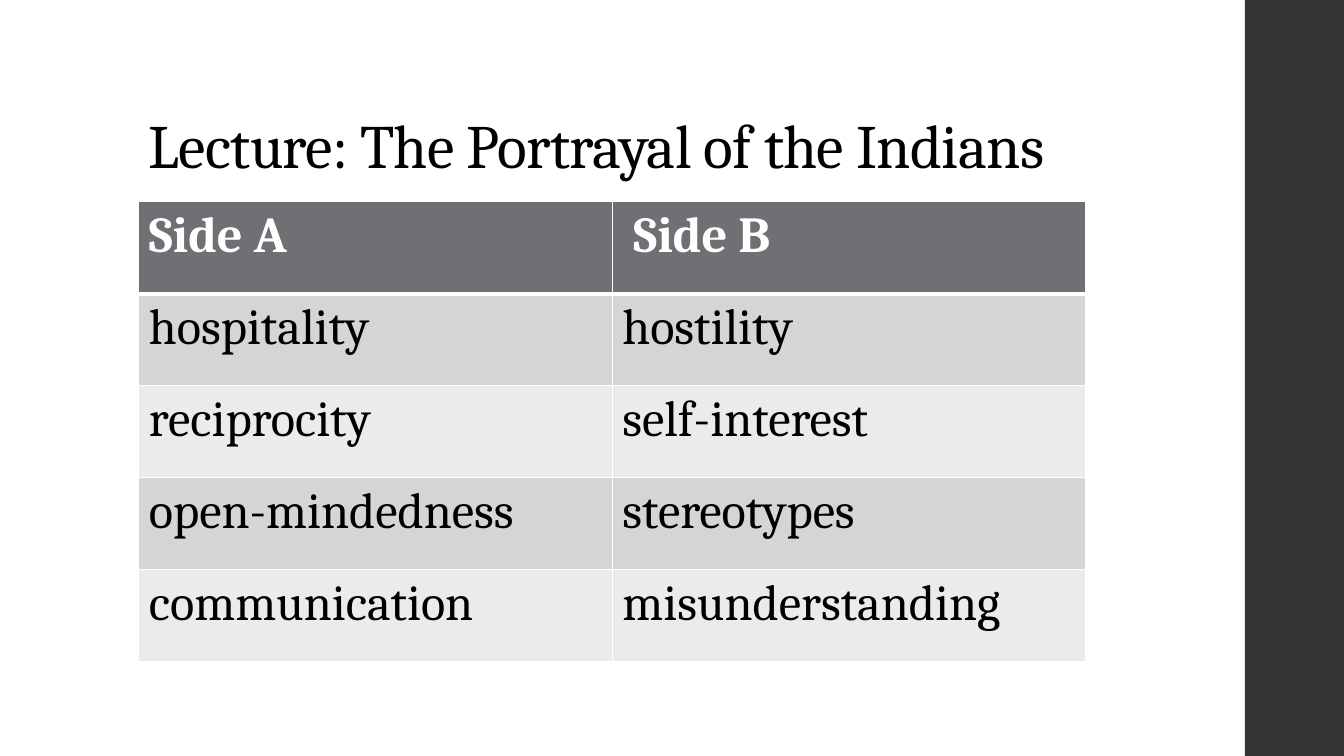
"""Build a slide that contrasts two portrayals in a two-column table."""
from pptx import Presentation, util as u
from pptx.dml.color import RGBColor
from pptx.enum import shapes, text
from pptx.oxml import parse_xml
from pptx.oxml.ns import nsdecls

BLACK = RGBColor(0x00, 0x00, 0x00)
WHITE = RGBColor(0xFF, 0xFF, 0xFF)
CHARCOAL = RGBColor(0x35, 0x35, 0x37)
HEADER_GRAY = RGBColor(0x6F, 0x6F, 0x74)
BANDS = [RGBColor(0xEB, 0xEB, 0xEB), RGBColor(0xD5, 0xD5, 0xD6)]
LEFT = u.Cm(3.5)
ROWS = [
    ("Side A", " Side B"),
    ("hospitality", "hostility"),
    ("reciprocity", "self-interest"),
    ("open-mindedness", "stereotypes"),
    ("communication", "misunderstanding"),
]


def write(para, words, color, **formats):
    span = para.add_run()
    span.text = words
    span.font.color.rgb = color
    for name, value in {"name": "Cambria", **formats}.items():
        setattr(span.font, name, value)
    return span


def add_border(cell, side, points):
    cell._tc.get_or_add_tcPr().append(parse_xml(
        f'<a:{side} {nsdecls("a")} w="{u.Pt(points)}"><a:solidFill>'
        f'<a:srgbClr val="{WHITE}"/></a:solidFill></a:{side}>'))


deck = Presentation()
deck.slide_width, deck.slide_height = u.Cm(33.87), u.Cm(19.05)
page = deck.slides.add_slide(deck.slide_layouts[6])

strip = page.shapes.add_shape(
    shapes.MSO_SHAPE.RECTANGLE, u.Cm(31.37), 0, u.Cm(2.54), deck.slide_height)
strip.shadow.inherit = False
strip.fill.solid()
strip.fill.fore_color.rgb = CHARCOAL
strip.line.fill.background()

title = page.shapes.add_textbox(LEFT, u.Cm(1.02), u.Cm(26.92), u.Cm(3.68))
title.text_frame.word_wrap = True
title.text_frame.vertical_anchor = text.MSO_ANCHOR.BOTTOM
title_para = title.text_frame.paragraphs[0]
title_para.line_spacing = 0.9
title_span = write(title_para, "Lecture: The Portrayal of the Indians", BLACK, size=u.Pt(44))
title_span.font._element.set("spc", "-50")

table = page.shapes.add_table(
    len(ROWS), 2, LEFT, u.Cm(5.08), u.Cm(23.86), u.Cm(11.6)).table
for row_index, row in enumerate(ROWS):
    header = row_index == 0
    for column_index, words in enumerate(row):
        cell = table.cell(row_index, column_index)
        widths = {"lnL": 1, "lnR": 1, "lnT": 3 if row_index == 1 else 1, "lnB": 3 if header else 1}
        for side, points in widths.items():
            add_border(cell, side, points)
        cell.fill.solid()
        cell.fill.fore_color.rgb = HEADER_GRAY if header else BANDS[row_index % 2]
        write(cell.text_frame.paragraphs[0], words, WHITE if header else BLACK,
              size=u.Pt(36), bold=header)

deck.save("out.pptx")
